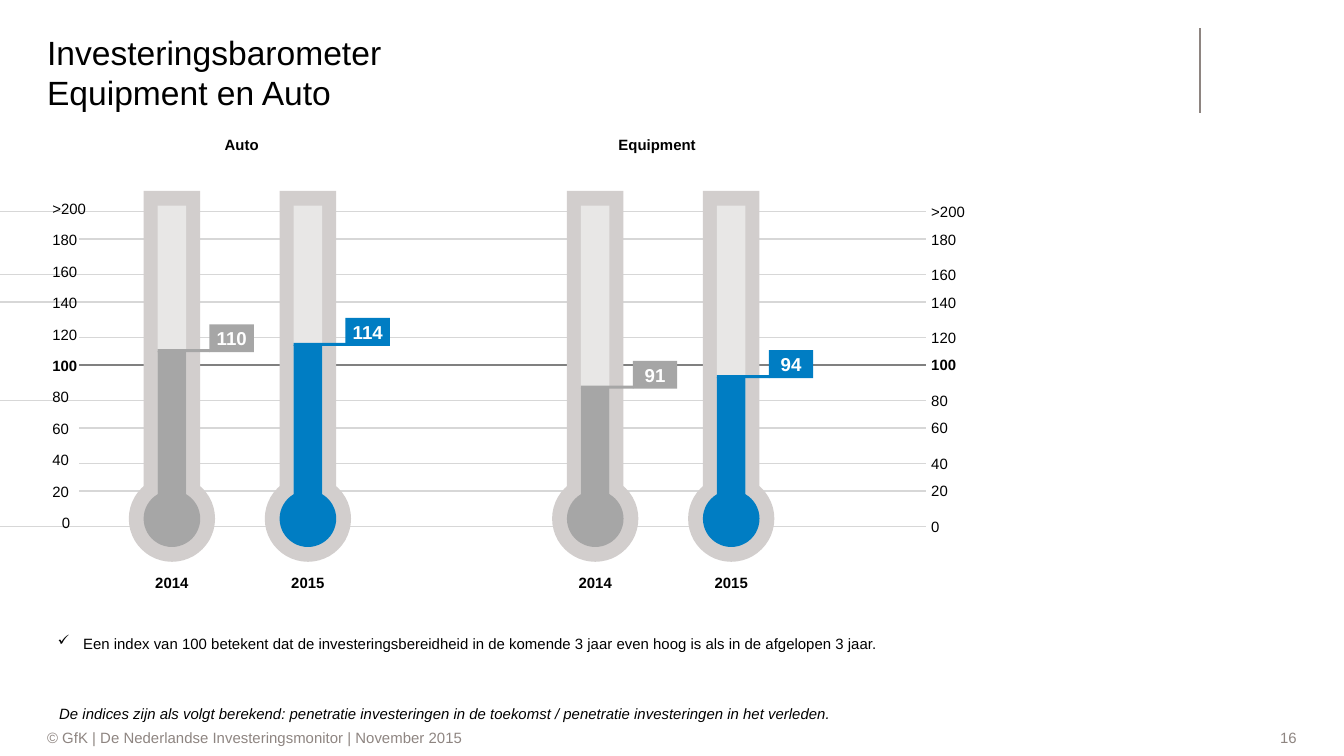
from dataclasses import dataclass

import pptx
import pptx.dml.color
import pptx.enum.shapes
import pptx.enum.text
import pptx.oxml.ns
import pptx.util
from lxml import etree

Cm = pptx.util.Cm
SHAPE = pptx.enum.shapes.MSO_SHAPE
ANCHOR = pptx.enum.text.MSO_ANCHOR
ALIGN = pptx.enum.text.PP_ALIGN

COLORS = {
    "black": "000000", "white": "FFFFFF", "taupe": "8E8581",
    "grid": "D7D7D7", "reference": "808080",
    "glass": "D2CECD", "empty": "E8E7E6", "grey": "A6A6A6", "blue": "007DC3",
}


@dataclass
class TextStyle:
    size: float = 8
    color: str = "black"
    bold: bool = False
    italic: bool = False
    align: int = ALIGN.LEFT
    anchor: int = ANCHOR.TOP
    insets: tuple = (0, 0, 0, 0)
    space_after: float = 0


@dataclass
class Tick:
    text: str
    left_width: float = 3.05
    line_left: float = 1.5
    left: float = 0.89
    bold: bool = False
    color: str = "grid"


@dataclass
class Thermometer:
    year: str
    value: str
    center: float
    level: float
    color: str


BLEED = -4.88
TICKS = [
    Tick(">200", line_left=BLEED), Tick("180"),
    Tick("160", 0.84, BLEED), Tick("140", 1.22, BLEED),
    Tick("120", 0.99), Tick("100", bold=True, color="reference"),
    Tick("80", line_left=BLEED), Tick("60", 0.71),
    Tick("40"), Tick("20", 0.71),
    Tick("0", line_left=BLEED, left=1.07),
]
THERMOMETERS = [
    Thermometer("2014", "110", 3.25, 6.6, "grey"),
    Thermometer("2015", "114", 5.82, 6.48, "blue"),
    Thermometer("2014", "91", 11.25, 7.29, "grey"),
    Thermometer("2015", "94", 13.82, 7.09, "blue"),
]
AXIS_RIGHT = 17.5
LABEL_HEIGHT = 1.07


def rgb(name: str) -> pptx.dml.color.RGBColor:
    return pptx.dml.color.RGBColor.from_string(COLORS[name])


def set_text(sp, text: str, style: TextStyle) -> None:
    tf = sp.text_frame
    tf.text = text
    tf.word_wrap = True
    tf.auto_size = pptx.enum.text.MSO_AUTO_SIZE.NONE
    tf.vertical_anchor = style.anchor
    tf.margin_left, tf.margin_top, tf.margin_right, tf.margin_bottom = map(Cm, style.insets)
    p = tf.paragraphs[0]
    p.alignment = style.align
    p.space_after = pptx.util.Pt(style.space_after)
    for r in p.runs:
        r.font.name = "Arial"
        r.font.size = pptx.util.Pt(style.size)
        r.font.bold = style.bold
        r.font.italic = style.italic
        r.font.color.rgb = rgb(style.color)


def add_text(shapes, box: tuple, text: str, style: TextStyle):
    sp = shapes.add_textbox(*map(Cm, box))
    set_text(sp, text, style)
    return sp


def add_filled(shapes, kind: int, box: tuple, color: str):
    sp = shapes.add_shape(kind, *map(Cm, box))
    sp.shadow.inherit = False
    sp.fill.solid()
    sp.fill.fore_color.rgb = rgb(color)
    sp.line.fill.background()
    return sp


def add_line(shapes, x1: float, y1: float, x2: float, y2: float, color: str) -> None:
    line = shapes.add_connector(pptx.enum.shapes.MSO_CONNECTOR.STRAIGHT, *map(Cm, (x1, y1, x2, y2)))
    line.line.color.rgb = rgb(color)
    line.line.width = pptx.util.Pt(0.75)
    etree.SubElement(line._element.spPr, pptx.oxml.ns.qn("a:effectLst"))


def add_scale(shapes) -> None:
    """Grid lines come in two interleaved series; the left labels are evenly spaced."""
    for i, tick in enumerate(TICKS):
        y = (4.52 if i % 2 else 4.0) + 1.19 * (i // 2)
        left_y = 3.94 + 0.594 * i
        style = TextStyle(bold=tick.bold, anchor=ANCHOR.MIDDLE, insets=(0.1, 0, 0.2, 0), space_after=6)
        add_line(shapes, tick.line_left, y, AXIS_RIGHT, y, tick.color)
        add_text(shapes, (AXIS_RIGHT, y - LABEL_HEIGHT / 2, 3.05, LABEL_HEIGHT), tick.text, style)
        add_text(shapes, (tick.left, left_y - LABEL_HEIGHT / 2, tick.left_width, LABEL_HEIGHT),
                 tick.text, style)


def add_thermometer(shapes, t: Thermometer) -> None:
    group = shapes.add_group_shape().shapes

    def centered(kind: int, top: float, width: float, height: float, color: str) -> None:
        add_filled(group, kind, (t.center - width / 2, top, width, height), color)

    centered(SHAPE.OVAL, 8.99, 1.63, 1.63, "glass")
    add_text(group, (t.center - 1.88, 10.74, 3.76, 2.69), t.year,
             TextStyle(bold=True, align=ALIGN.CENTER, insets=(0, 0.1, 0, 0), space_after=6))
    centered(SHAPE.RECTANGLE, 3.61, 1.07, 6.27, "glass")
    centered(SHAPE.RECTANGLE, 3.89, 0.54, 6.02, "empty")
    centered(SHAPE.OVAL, 9.27, 1.07, 1.07, t.color)
    centered(SHAPE.RECTANGLE, t.level + 0.04, 0.54, 9.61 - t.level, t.color)
    add_filled(group, SHAPE.RECTANGLE, (t.center - 0.27, t.level, 0.99, 0.06), t.color)
    flag = add_filled(group, SHAPE.RECTANGLE, (t.center + 0.71, t.level - 0.47, 0.84, 0.53), t.color)
    set_text(flag, t.value, TextStyle(10, "white", bold=True, align=ALIGN.CENTER, anchor=ANCHOR.MIDDLE))


def add_check_bullet(sp) -> None:
    pPr = sp.text_frame.paragraphs[0]._p.get_or_add_pPr()
    pPr.set("marL", str(Cm(0.48)))
    pPr.set("indent", str(-Cm(0.48)))
    etree.SubElement(pPr, pptx.oxml.ns.qn("a:buChar")).set("char", "✓")


def main() -> None:
    prs = pptx.Presentation()
    prs.slide_width, prs.slide_height = Cm(25.4), Cm(14.29)
    s = prs.slides.add_slide(prs.slide_layouts[5])
    shapes = s.shapes

    title = shapes.title
    title.left, title.top, title.width, title.height = map(Cm, (0.89, 0.53, 17.81, 1.6))
    set_text(title, "Investeringsbarometer\vEquipment en Auto", TextStyle(18, anchor=ANCHOR.BOTTOM))
    add_line(shapes, 22.68, 0.53, 22.68, 2.13, "taupe")

    footers = [
        ((20.9, 13.74, 3.61, 0.41), "16", ALIGN.RIGHT),
        ((0.89, 13.74, 19.61, 0.41), "© GfK | De Nederlandse Investeringsmonitor | November 2015", ALIGN.LEFT),
    ]
    for box, text, align in footers:
        sp = add_filled(shapes, SHAPE.RECTANGLE, box, "white")
        set_text(sp, text, TextStyle(color="taupe", align=align, anchor=ANCHOR.MIDDLE))

    add_scale(shapes)
    note = add_text(shapes, (1.09, 11.94, 17.27, 1.8),
                    "Een index van 100 betekent dat de investeringsbereidheid in de komende 3 jaar "
                    "even hoog is als in de afgelopen 3 jaar.", TextStyle(insets=(0, 0.05, 0, 0)))
    add_check_bullet(note)
    add_text(shapes, (1.12, 13.31, 20.02, 0.43),
             "De indices zijn als volgt berekend: penetratie investeringen in de toekomst / "
             "penetratie investeringen in het verleden.", TextStyle(italic=True))

    for thermometer in THERMOMETERS:
        add_thermometer(shapes, thermometer)
    for left, text in ((2.69, "Auto"), (10.54, "Equipment")):
        add_text(shapes, (left, 2.46, 3.76, 0.64), text,
                 TextStyle(bold=True, align=ALIGN.CENTER, insets=(0, 0.1, 0, 0), space_after=6))

    prs.save("out.pptx")


if __name__ == "__main__":
    main()
